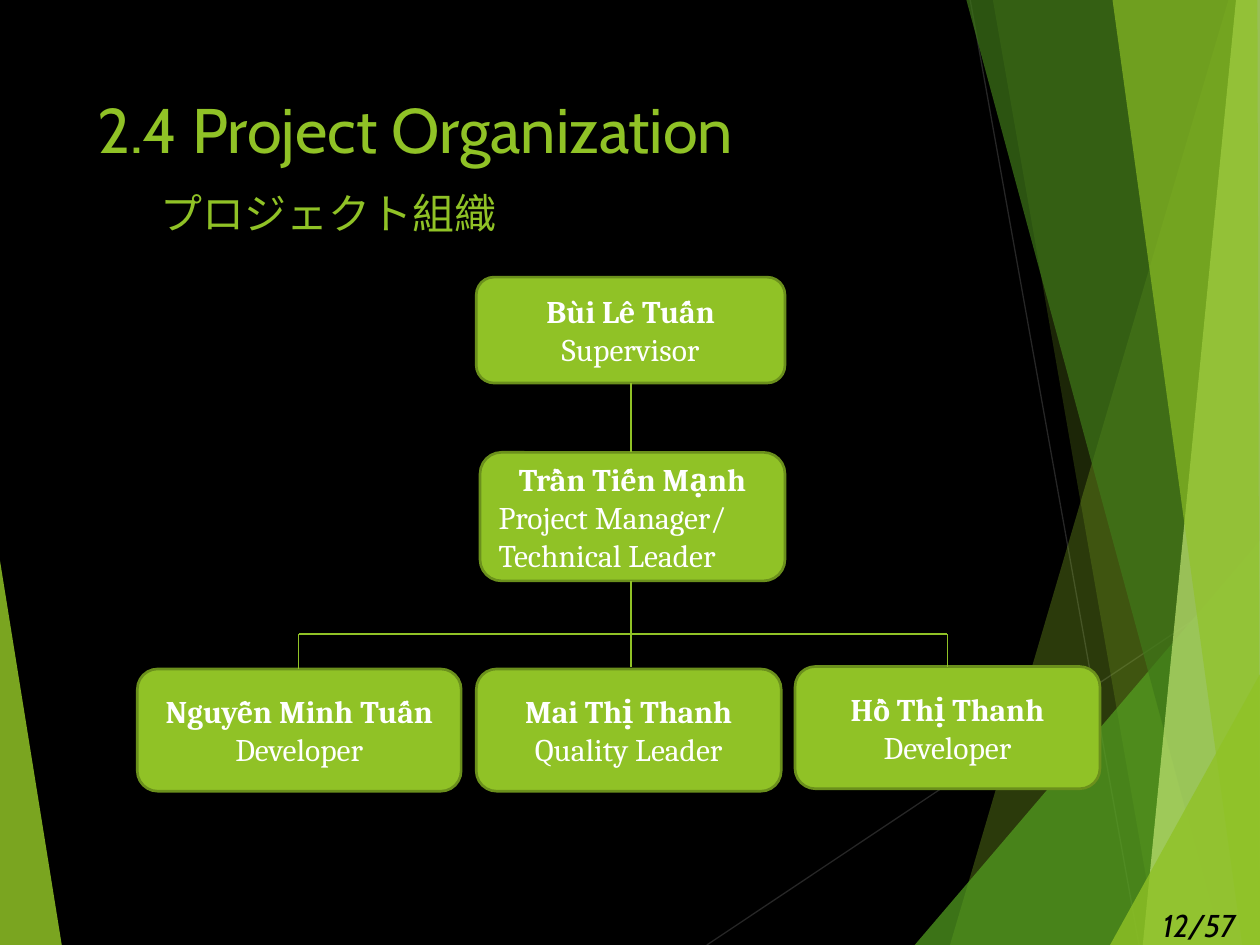
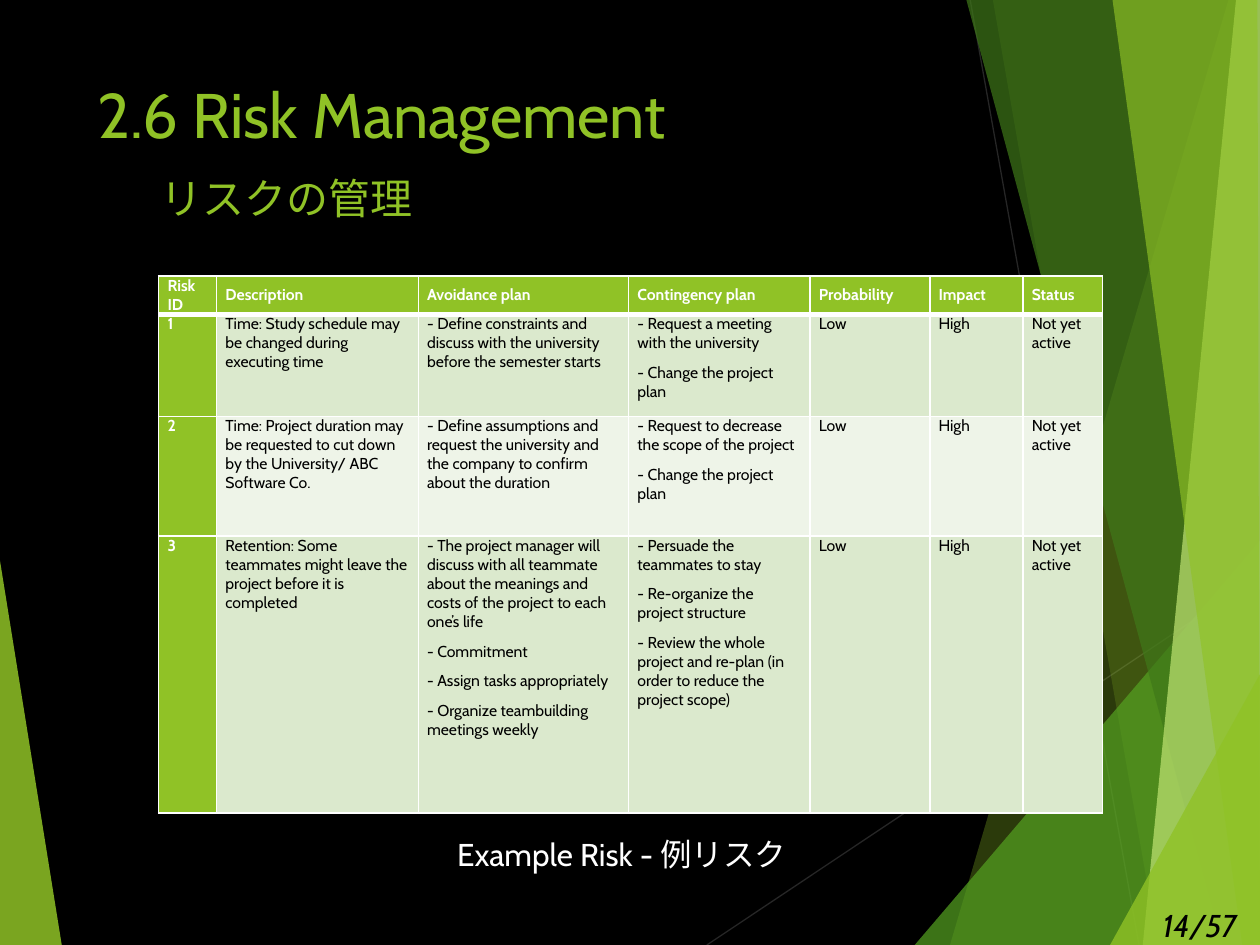
from dataclasses import dataclass
from itertools import product

from lxml import etree
from pptx import Presentation
from pptx.dml.color import RGBColor
from pptx.enum.shapes import MSO_CONNECTOR as Connector, MSO_SHAPE as Preset
from pptx.enum.text import MSO_ANCHOR as Anchor, MSO_AUTO_SIZE as AutoSize, PP_ALIGN as Align
from pptx.oxml.ns import qn
from pptx.slide import Slide, SlideLayout
from pptx.util import Inches, Pt

GREEN, DARK_GREEN, BLACK, WHITE = "90C226", "6B901C", "000000", "FFFFFF"
BAND_COLORS = ("DBE9CD", "EEF4E8")
BODY_FONT, BOX_FONT = "Cabin", "Cambria"
TITLE_FORMAT = {"name": BODY_FONT, "size": Pt(36), "color": GREEN}
SUBTITLE_FORMAT = TITLE_FORMAT | {"size": Pt(24)}
BOX_FORMAT = {"name": BOX_FONT, "size": Pt(18), "color": WHITE, "bold": False}
LABEL_FORMAT = {"name": BODY_FONT, "size": Pt(18), "color": WHITE}
PAGE_FORMAT = LABEL_FORMAT | {"color": BLACK, "italic": True}
CELL_FORMAT = {"name": BODY_FONT, "size": Pt(9), "color": BLACK, "bold": False}
HEADING_FORMAT = CELL_FORMAT | {"color": WHITE, "bold": True}


@dataclass(frozen=True)
class Facet:
    color: str
    opacity: int
    points: tuple[tuple[float, float], ...]


@dataclass(frozen=True)
class Line:
    start: tuple[float, float]
    end: tuple[float, float]
    color: str = GREEN
    width: float = 1


@dataclass(frozen=True)
class Member:
    name: str
    roles: tuple[str, ...]
    left: float
    top: float
    width: float
    height: float
    role_align: Align = Align.CENTER


BACKDROP_LINES = (
    Line((5.61, 7.5), (10, 4.57), "262626", 0.75),
    Line((7.7, 0), (9.04, 7.5), "262626", 0.75),
)
FACETS = (
    Facet(GREEN, 85, ((0, 4.45), (0.49, 7.5), (0, 7.5))),
    Facet(GREEN, 30, ((9.75, 0), (7.54, 7.5), (10, 7.5), (10, 0))),
    Facet(GREEN, 20, ((7.88, 0), (9.19, 7.5), (10, 7.5), (10, 0))),
    Facet("54A021", 72, ((7.26, 7.5), (10, 4.29), (10, 7.5))),
    Facet("3F7819", 70, ((7.67, 0), (9.7, 7.5), (10, 7.5), (10, 0))),
    Facet("C0E474", 70, ((9.81, 0), (9.07, 7.5), (10, 7.5), (10, 0))),
    Facet(GREEN, 65, ((8.83, 0), (9.86, 7.5), (10, 7.5), (9.98, 0))),
    Facet(GREEN, 80, ((8.81, 7.5), (10, 5.35), (10, 7.5))),
)
MEMBERS = (
    Member("Bùi Lê Tuấn", ("Supervisor",), 3.78, 2.2, 2.45, 0.84),
    Member("Trần Tiến Mạnh", ("Project Manager/", "Technical Leader"),
           3.81, 3.59, 2.42, 1.02, Align.LEFT),
    Member("Hồ Thị Thanh", ("Developer",), 6.31, 5.29, 2.42, 0.97),
    Member("Mai Thị Thanh", ("Quality Leader",), 3.78, 5.31, 2.42, 0.97),
    Member("Nguyễn Minh Tuấn", ("Developer",), 1.09, 5.31, 2.57, 0.97),
)
TRUNK, LEFT_BRANCH, RIGHT_BRANCH, BRANCH_TOP = 5.01, 2.37, 7.52, 5.03
ORGANIZATION_LINES = (
    Line((TRUNK, 3.04), (TRUNK, 3.59)),
    Line((LEFT_BRANCH, 5.31), (LEFT_BRANCH, BRANCH_TOP)),
    Line((RIGHT_BRANCH, 5.29), (RIGHT_BRANCH, BRANCH_TOP)),
    Line((LEFT_BRANCH, BRANCH_TOP), (RIGHT_BRANCH, BRANCH_TOP)),
    Line((TRUNK, 4.61), (TRUNK, 5.29)),
)
COLUMN_WIDTHS = (0.46, 1.6, 1.67, 1.44, 0.95, 0.74, 0.63)
ROW_HEIGHTS = (0.29, 0.81, 0.95, 2.2)
RATING = ("Low", "High", "Not yet active")
RISKS = (
    ("Risk ID", "Description", "Avoidance plan", "Contingency plan",
     "Probability", "Impact", "Status"),
    ("1", "Time: Study schedule may be changed during executing time",
     "- Define constraints and discuss with the university before the semester starts",
     "- Request a meeting with the university\n- Change the project plan", *RATING),
    ("2", "Time: Project duration may be requested to cut down by the University/ ABC Software Co.",
     "- Define assumptions and request the university and the company to confirm about the duration",
     "- Request to decrease the scope of the project\n- Change the project plan", *RATING),
    ("3", "Retention: Some teammates might leave the project before it is completed",
     "- The project manager will discuss with all teammate about the meanings and costs "
     "of the project to each one’s life\n- Commitment\n- Assign tasks appropriately\n"
     "- Organize teambuilding meetings weekly",
     "- Persuade the teammates to stay\n- Re-organize the project structure\n"
     "- Review the whole project and re-plan (in order to reduce the project scope)", *RATING),
)


def rgb(color: str) -> RGBColor:
    return RGBColor.from_string(color)


def apply_format(font, values: dict) -> None:
    for attribute, value in values.items():
        if attribute == "color":
            font.color.rgb = rgb(value)
        else:
            setattr(font, attribute, value)


def set_fill(target, color: str) -> None:
    target.fill.solid()
    target.fill.fore_color.rgb = rgb(color)


def add_line(slide: Slide, line: Line):
    ends = [Inches(value) for value in line.start + line.end]
    connector = slide.shapes.add_connector(Connector.STRAIGHT, *ends)
    connector.line.color.rgb = rgb(line.color)
    connector.line.width = Pt(line.width)
    etree.SubElement(connector.element.spPr, qn("a:effectLst"))
    return connector


def add_facet(slide: Slide, facet: Facet):
    start, *others = [(Inches(x), Inches(y)) for x, y in facet.points]
    builder = slide.shapes.build_freeform(*start)
    builder.add_line_segments(others, close=True)
    shape = builder.convert_to_shape()
    set_fill(shape, facet.color)
    color = next(shape.element.spPr.iter(qn("a:srgbClr")))
    etree.SubElement(color, qn("a:alpha"), val=str(facet.opacity * 1000))
    shape.line.fill.background()
    shape.shadow.inherit = False
    return shape


def build_backdrop(slide: Slide, layout: SlideLayout) -> None:
    set_fill(layout.background, BLACK)
    for placeholder in list(layout.placeholders)[1:]:
        layout.shapes.element.remove(placeholder.element)
    shapes = [add_line(slide, line) for line in BACKDROP_LINES]
    shapes += [add_facet(slide, facet) for facet in FACETS]
    for shape in shapes:
        layout.shapes.element.append(shape.element)


def set_title(slide: Slide, heading: str, subtitle: str, top: float) -> None:
    title = slide.shapes.title
    title.left, title.top = Inches(0.67), Inches(top)
    title.width, title.height = Inches(6.94), Inches(1.44)
    frame = title.text_frame
    frame.auto_size = AutoSize.NONE
    frame.vertical_anchor = Anchor.TOP
    paragraph = frame.paragraphs[0]
    paragraph.alignment = Align.LEFT
    for text, values in ((heading, TITLE_FORMAT), ("\t", TITLE_FORMAT), (subtitle, SUBTITLE_FORMAT)):
        if text == "\t":
            paragraph.add_line_break()
        run = paragraph.add_run()
        run.text = text
        apply_format(run.font, values)


def add_label(slide: Slide, text: str, left: float, top: float, width: float, values: dict) -> None:
    box = slide.shapes.add_textbox(Inches(left), Inches(top), Inches(width), Inches(0.4))
    frame = box.text_frame
    frame.word_wrap = False
    frame.auto_size = AutoSize.SHAPE_TO_FIT_TEXT
    run = frame.paragraphs[0].add_run()
    run.text = text
    apply_format(run.font, values)


def add_member(slide: Slide, member: Member) -> None:
    bounds = [Inches(value) for value in (member.left, member.top, member.width, member.height)]
    shape = slide.shapes.add_shape(Preset.ROUNDED_RECTANGLE, *bounds)
    set_fill(shape, GREEN)
    shape.line.color.rgb = rgb(DARK_GREEN)
    shape.line.width = Pt(1.5)
    shape.shadow.inherit = False
    frame = shape.text_frame
    frame.vertical_anchor = Anchor.MIDDLE
    frame.text = "\n".join((member.name, *member.roles))
    for index, paragraph in enumerate(frame.paragraphs):
        paragraph.alignment = member.role_align if index else Align.CENTER
        apply_format(paragraph.runs[0].font, BOX_FORMAT | {"bold": index == 0})


def add_border(properties, position: int, side: str, width: float) -> None:
    border = etree.Element(qn(f"a:ln{side}"), w=str(Pt(width)))
    fill = etree.SubElement(border, qn("a:solidFill"))
    etree.SubElement(fill, qn("a:srgbClr"), val=WHITE)
    properties.insert(position, border)


def add_risk_table(slide: Slide) -> None:
    frame = slide.shapes.add_table(
        len(ROW_HEIGHTS), len(COLUMN_WIDTHS), Inches(1.26), Inches(2.19),
        Inches(sum(COLUMN_WIDTHS)), Inches(sum(ROW_HEIGHTS)))
    table = frame.table
    for column, width in zip(table.columns, COLUMN_WIDTHS):
        column.width = Inches(width)
    for row, height in zip(table.rows, ROW_HEIGHTS):
        row.height = Inches(height)
    cells = product(range(len(ROW_HEIGHTS)), range(len(COLUMN_WIDTHS)))
    for row, column in cells:
        cell = table.cell(row, column)
        is_heading = row == 0 or column == 0
        set_fill(cell, GREEN if is_heading else BAND_COLORS[(row - 1) % 2])
        cell.vertical_anchor = Anchor.TOP if row else Anchor.MIDDLE
        cell.margin_left = cell.margin_right = Inches(0.07)
        cell.margin_top = cell.margin_bottom = 0
        cell.text_frame.text = RISKS[row][column]
        for paragraph in cell.text_frame.paragraphs:
            paragraph.space_before = paragraph.space_after = Pt(3)
            apply_format(paragraph.runs[0].font, HEADING_FORMAT if is_heading else CELL_FORMAT)
    for index, properties in enumerate(frame.element.iter(qn("a:tcPr"))):
        row = index // len(COLUMN_WIDTHS)
        widths = {"L": 1, "R": 1, "T": 3 if row == 1 else 1, "B": 3 if row == 0 else 1}
        for position, (side, width) in enumerate(widths.items()):
            add_border(properties, position, side, width)


def main() -> None:
    presentation = Presentation()
    presentation.slide_width, presentation.slide_height = Inches(10), Inches(7.5)
    layout = presentation.slide_layouts.get_by_name("Title Only")

    organization = presentation.slides.add_slide(layout)
    build_backdrop(organization, layout)
    set_title(organization, "2.4 Project Organization", "プロジェクト組織", 0.67)
    for member in MEMBERS:
        add_member(organization, member)
    for line in ORGANIZATION_LINES:
        add_line(organization, line)

    risks = presentation.slides.add_slide(layout)
    set_title(risks, "2.6 Risk Management", "リスクの管理", 0.55)
    add_risk_table(risks)
    add_label(risks, "Example Risk - 例リスク", 3.53, 6.58, 2.94, LABEL_FORMAT)

    for slide, page in ((organization, "12/57"), (risks, "14/57")):
        add_label(slide, page, 9.13, 7.14, 0.87, PAGE_FORMAT)
    presentation.save("out.pptx")


if __name__ == "__main__":
    main()
